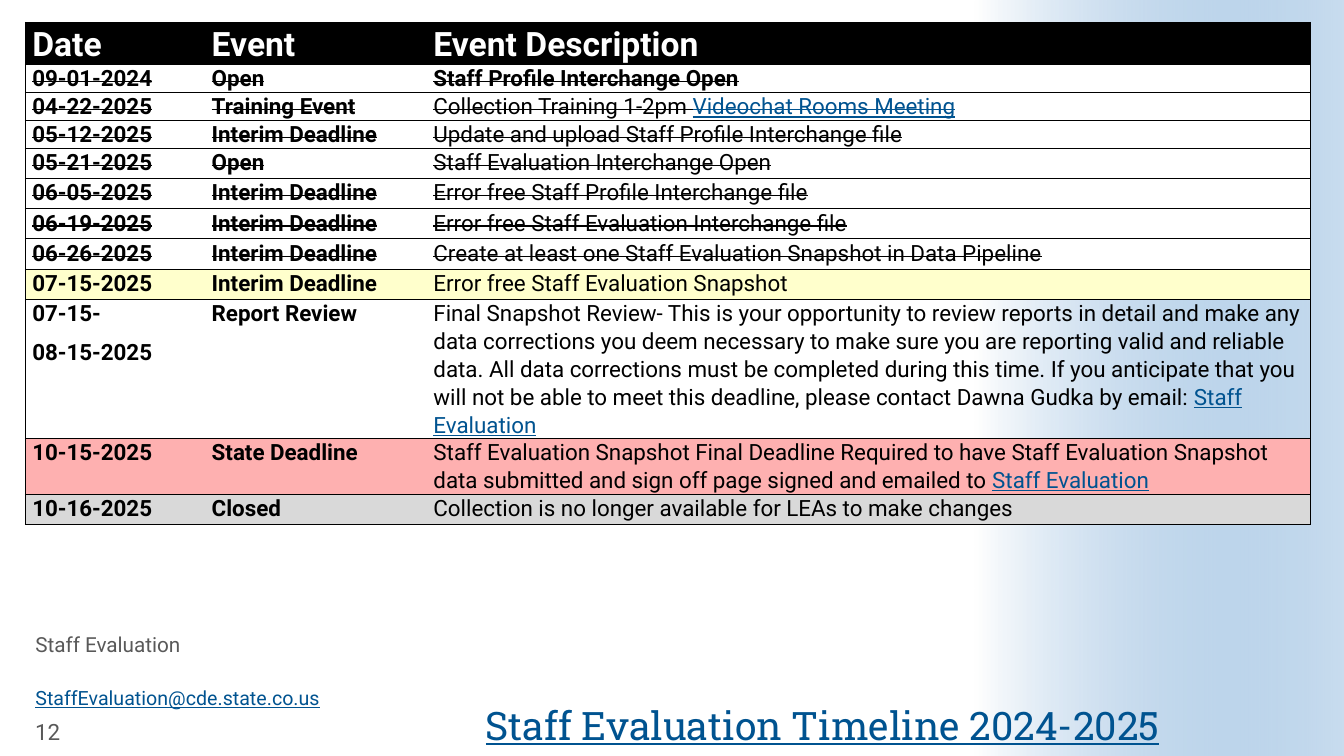
from dataclasses import dataclass
from typing import Any, NamedTuple, Optional

from lxml import etree
from pptx import Presentation
from pptx import util as u
from pptx.dml.color import RGBColor
from pptx.enum import shapes, text
from pptx.oxml.ns import qn

BLACK = RGBColor(0x00, 0x00, 0x00)
WHITE = RGBColor(0xFF, 0xFF, 0xFF)
GREY = RGBColor(0x59, 0x59, 0x59)
LINK = RGBColor(0x00, 0x53, 0x90)
SKY = RGBColor(0x48, 0x8B, 0xC9)
YELLOW = RGBColor(0xFF, 0xFF, 0xCC)
PINK = RGBColor(0xFE, 0xB0, 0xB0)
SILVER = RGBColor(0xD9, 0xD9, 0xD9)

W, H = u.Inches(13.33), u.Inches(7.5)
BODY_FONT = "Roboto"
NO_GRID_STYLE = "{2D5ABB26-0587-4C30-8999-92F81FD0307C}"
COLUMNS = (13.35, 16.5, 65.79)  # percent of slide width


class Box(NamedTuple):
    """Left, top, width and height in percent of the slide."""
    left: float
    top: float
    width: float
    height: float

    def emu(self) -> tuple[int, ...]:
        return tuple(round(v * side / 100) for v, side in zip(self, (W, H, W, H)))


@dataclass
class Event:
    date: str  # one line per paragraph
    kind: str
    description: str
    link: str = ""
    fill: Optional[RGBColor] = WHITE
    done: bool = False
    height: float = 4  # percent of slide height


@dataclass
class Label:
    box: Box
    words: str
    size: float
    color: RGBColor = GREY
    font: str = BODY_FONT
    underline: bool = False
    anchor: Any = text.MSO_ANCHOR.TOP
    align: Any = text.PP_ALIGN.LEFT
    spacing: float = 1
    inset: bool = True


EVENTS = [
    Event("09-01-2024", "Open", "Staff Profile Interchange Open", done=True, height=2.53),
    Event("04-22-2025", "Training Event", "Collection Training 1-2pm ",
          "Videochat Rooms Meeting", done=True, height=2.53),
    Event("05-12-2025", "Interim Deadline",
          "Update and upload Staff Profile Interchange file", done=True, height=3.7),
    Event("05-21-2025", "Open", "Staff Evaluation Interchange Open", done=True),
    Event("06-05-2025", "Interim Deadline",
          "Error free Staff Profile Interchange file", done=True),
    Event("06-19-2025", "Interim Deadline",
          "Error free Staff Evaluation Interchange file", done=True),
    Event("06-26-2025", "Interim Deadline",
          "Create at least one Staff Evaluation Snapshot in Data Pipeline", done=True),
    Event("07-15-2025", "Interim Deadline", "Error free Staff Evaluation Snapshot",
          fill=YELLOW),
    Event("07-15-\n08-15-2025", "Report Review",
          "Final Snapshot Review- This is your opportunity to review reports in detail "
          "and make any data corrections you deem necessary to make sure you are "
          "reporting valid and reliable data. All data corrections must be completed "
          "during this time. If you anticipate that you will not be able to meet this "
          "deadline, please contact Dawna Gudka by email: ",
          "Staff Evaluation", fill=None),
    Event("10-15-2025", "State Deadline",
          "Staff Evaluation Snapshot Final Deadline Required to have Staff Evaluation "
          "Snapshot data submitted and sign off page signed and emailed to ",
          "Staff Evaluation", fill=PINK),
    Event("10-16-2025", "Closed",
          "Collection is no longer available for LEAs to make changes", fill=SILVER),
]

TITLE = Label(Box(31.96, 86, 54.31, 13.07), "Staff Evaluation Timeline 2024-2025", 28, LINK,
              "Roboto Slab", True, text.MSO_ANCHOR.BOTTOM, text.PP_ALIGN.RIGHT, 0.9, False)
CONTACT = Label(Box(1.88, 83.6, 30.08, 4.13), "Staff Evaluation", 14.8, spacing=0.8)
EMAIL = Label(Box(1.88, 87.6, 29.18, 6.93), "StaffEvaluation@cde.state.co.us", 14, LINK,
              underline=True, anchor=text.MSO_ANCHOR.BOTTOM, spacing=0.9)
NUMBER = Label(Box(1.88, 94.67, 6.38, 4.13), "12", 16, anchor=text.MSO_ANCHOR.MIDDLE)


def add_run(p: Any, words: str, color: RGBColor, strike: bool = False, **fmt: Any) -> None:
    r = p.add_run()
    r.text = words
    for name, value in fmt.items():
        setattr(r.font, name, value)
    r.font.color.rgb = color
    if strike:
        r.font._element.set("strike", "sngStrike")


def write_label(sp: Any, label: Label) -> None:
    sp.left, sp.top, sp.width, sp.height = label.box.emu()
    tf = sp.text_frame
    frame = {"word_wrap": True, "auto_size": text.MSO_AUTO_SIZE.NONE,
             "vertical_anchor": label.anchor}
    if not label.inset:
        frame |= dict.fromkeys(
            ("margin_left", "margin_top", "margin_right", "margin_bottom"), 0)
    for name, value in frame.items():
        setattr(tf, name, value)
    p = tf.paragraphs[0]
    for name, value in {"alignment": label.align, "line_spacing": label.spacing,
                        "space_before": u.Pt(0)}.items():
        setattr(p, name, value)
    add_run(p, label.words, label.color, size=u.Pt(label.size), name=label.font,
            bold=False, underline=label.underline)


def border_cell(cell: Any, sides: str) -> None:
    tcPr = cell._tc.get_or_add_tcPr()
    for place, side in enumerate(sides):
        ln = etree.Element(qn(f"a:ln{side}"), w=str(u.Pt(0.5)))
        solid = etree.SubElement(ln, qn("a:solidFill"))
        etree.SubElement(solid, qn("a:srgbClr"), val=str(BLACK))
        tcPr.insert(place, ln)


def write_cell(cell: Any, words: str, column: int, fill: Optional[RGBColor],
               color: RGBColor = BLACK, size: float = 16, bold: bool = True,
               strike: bool = False, link: str = "", after: float = 8) -> None:
    for name, value in {"margin_left": u.Inches(0.07), "margin_right": u.Inches(0.07),
                        "margin_top": 0, "margin_bottom": 0}.items():
        setattr(cell, name, value)
    if fill is None:
        cell.fill.background()
    else:
        cell.fill.solid()
        cell.fill.fore_color.rgb = fill
    border_cell(cell, ("L" if column == 0 else "")
                + ("R" if column == len(COLUMNS) - 1 else "") + "TB")
    tf = cell.text_frame
    fmt = {"size": u.Pt(size), "name": BODY_FONT, "bold": bold}
    for i, line in enumerate(words.split("\n")):
        p = tf.add_paragraph() if i else tf.paragraphs[0]
        p.line_spacing, p.space_after = 1.07, u.Pt(after)
        add_run(p, line, color, strike, **fmt)
    if link:
        add_run(p, link, LINK, strike, underline=True, **fmt)


def add_timeline(s: Any) -> None:
    frame = s.shapes.add_table(len(EVENTS) + 1, len(COLUMNS),
                               *Box(1.88, 2.93, sum(COLUMNS), 66.27).emu())
    tbl = frame.table
    tbl.first_row = tbl.horz_banding = False
    tbl._tbl.tblPr.find(qn("a:tableStyleId")).text = NO_GRID_STYLE
    for col, share in zip(tbl.columns, COLUMNS):
        col.width = round(W * share / 100)
    for row, share in zip(tbl.rows, [2.53] + [e.height for e in EVENTS]):
        row.height = round(H * share / 100)
    for c, heading in enumerate(("Date", "Event", "Event Description")):
        write_cell(tbl.cell(0, c), heading, c, BLACK, WHITE, 24, after=0)
    for i, e in enumerate(EVENTS):
        for c, words in enumerate((e.date, e.kind, e.description)):
            last = c == 2
            write_cell(tbl.cell(i + 1, c), words, c, e.fill, bold=not last or i == 0,
                       strike=e.done, link=e.link if last else "")


def add_side_fade(s: Any) -> None:
    sp = s.shapes.add_shape(shapes.MSO_SHAPE.RECTANGLE, *Box(58.14, 25.6, 56.26, 48.8).emu())
    sp.rotation = 270
    sp.shadow.inherit = False
    sp.line.fill.background()
    sp.fill.gradient()
    sp.fill.gradient_angle = 270
    for stop, color in zip(sp.fill.gradient_stops, (WHITE, SKY)):
        stop.color.rgb = color
    sky = sp._element.spPr.findall(".//" + qn("a:srgbClr"))[-1]
    etree.SubElement(sky, qn("a:alpha"), val="30000")
    # Send behind the placeholders
    s.shapes._spTree.insert(2, sp._element)


def main() -> None:
    prs = Presentation()
    prs.slide_width, prs.slide_height = W, H
    s = prs.slides.add_slide(prs.slide_layouts[4])
    holders = {ph.placeholder_format.idx: ph for ph in s.placeholders}
    for idx in (2, 4):
        holders[idx]._element.getparent().remove(holders[idx]._element)

    # Background and table
    add_side_fade(s)
    add_timeline(s)

    # Title, contact lines and slide number
    for idx, label in {0: TITLE, 1: CONTACT, 3: EMAIL}.items():
        write_label(holders[idx], label)
    write_label(s.shapes.add_textbox(*NUMBER.box.emu()), NUMBER)
    prs.save("out.pptx")


if __name__ == "__main__":
    main()
